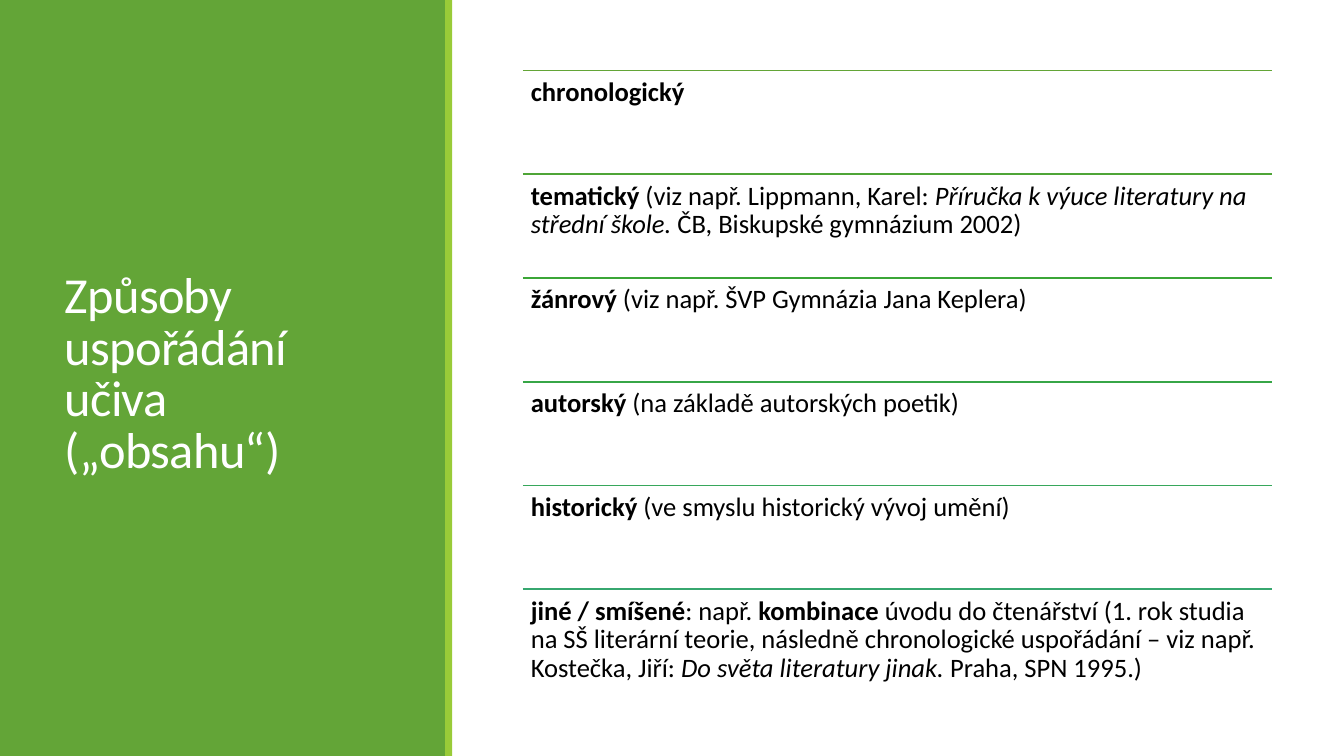
from lxml import etree
from pptx import Presentation
from pptx.dml.color import RGBColor
from pptx.enum import shapes, text
from pptx.oxml.ns import qn
from pptx.util import Pt

COLOURS = {"panel": "63A537", "strip": "99CB38", "title": "FFFFFF", "body": "000000"}
FONT = "Calibri"
WIDTH, HEIGHT = 960, 540

# Each item: rule colour, then spans of (style, wording); b is bold, i is italic.
ITEMS = [
    ("63A537", [("b", "chronologický")]),
    ("4FA537", [("b", "tematický"), ("", " (viz např. Lippmann, Karel: "),
                ("i", "Příručka k výuce literatury na střední škole."),
                ("", " ČB, Biskupské gymnázium 2002)")]),
    ("3BA637", [("b", "žánrový"), ("", " (viz např. ŠVP Gymnázia Jana Keplera)")]),
    ("37A647", [("b", "autorský "), ("", "(na základě autorských poetik)")]),
    ("37A75B", [("b", "historický "), ("", "(ve smyslu historický vývoj umění)")]),
    ("37A76F", [("b", "jiné / smíšené"), ("", ": např. "), ("b", "kombinace"),
                ("", " úvodu do čtenářství (1. rok studia na SŠ literární teorie, "
                     "následně chronologické uspořádání – viz např. Kostečka, Jiří: "),
                ("i", "Do světa literatury jinak. "), ("", "Praha, SPN 1995.)")]),
]


def style_font(font, size, colour):
    font.name = FONT
    font.size = Pt(size)
    font.color.rgb = RGBColor.from_string(colour)


def add_block(slide, left, top, width, height, colour):
    block = slide.shapes.add_shape(shapes.MSO_SHAPE.RECTANGLE,
                                   Pt(left), Pt(top), Pt(width), Pt(height))
    block.shadow.inherit = False
    block.fill.solid()
    block.fill.fore_color.rgb = RGBColor.from_string(colour)
    block.line.fill.background()


def add_title_panel(slide, left, top, width, height):
    strip = 5
    add_block(slide, left, top, width - strip, height, COLOURS["panel"])
    add_block(slide, left + width - strip, top, strip, height, COLOURS["strip"])

    title = slide.shapes.title
    slide.shapes._spTree.append(title._element)  # bring in front of the panel
    title.left, title.top = Pt(left + 39), Pt(top + 41)
    title.width, title.height = Pt(242.5), Pt(454.5)
    frame = title.text_frame
    frame.text = "Způsoby uspořádání učiva („obsahu“)"
    frame.word_wrap = True
    frame.auto_size = text.MSO_AUTO_SIZE.NONE
    frame.vertical_anchor = text.MSO_ANCHOR.MIDDLE
    para = frame.paragraphs[0]
    para.alignment = text.PP_ALIGN.LEFT
    para.line_spacing = 0.85
    style_font(para.font, 36, COLOURS["title"])
    para.runs[0].font._element.set("spc", "-50")


def add_item(slide, left, top, width, height, colour, spans):
    rule = slide.shapes.add_connector(shapes.MSO_CONNECTOR.STRAIGHT,
                                      Pt(left), Pt(top), Pt(left + width), Pt(top))
    rule.line.color.rgb = RGBColor.from_string(colour)
    rule.line.width = Pt(1.25)
    etree.SubElement(rule._element.spPr, qn("a:effectLst"))

    box = slide.shapes.add_textbox(Pt(left), Pt(top), Pt(width), Pt(height))
    frame = box.text_frame
    frame.word_wrap = True
    frame.margin_left = frame.margin_right = Pt(5.7)
    frame.margin_top = frame.margin_bottom = Pt(5.7)
    para = frame.paragraphs[0]
    para.line_spacing = 0.9
    style_font(para.font, 19, COLOURS["body"])
    for style, wording in spans:
        span = para.add_run()
        span.text = wording
        span.font.bold = style == "b"
        span.font.italic = style == "i"


def add_item_list(slide, left, top, width, height):
    step = height / len(ITEMS)
    for index, (colour, spans) in enumerate(ITEMS):
        add_item(slide, left, top + index * step, width, step, colour, spans)


def main():
    deck = Presentation()
    deck.slide_width, deck.slide_height = Pt(WIDTH), Pt(HEIGHT)
    page = deck.slides.add_slide(deck.slide_layouts.get_by_name("Title Only"))
    add_title_panel(page, 0, 0, 323, HEIGHT)
    add_item_list(page, 373.5, 50.4, 535, 444.6)
    deck.save("out.pptx")


if __name__ == "__main__":
    main()
